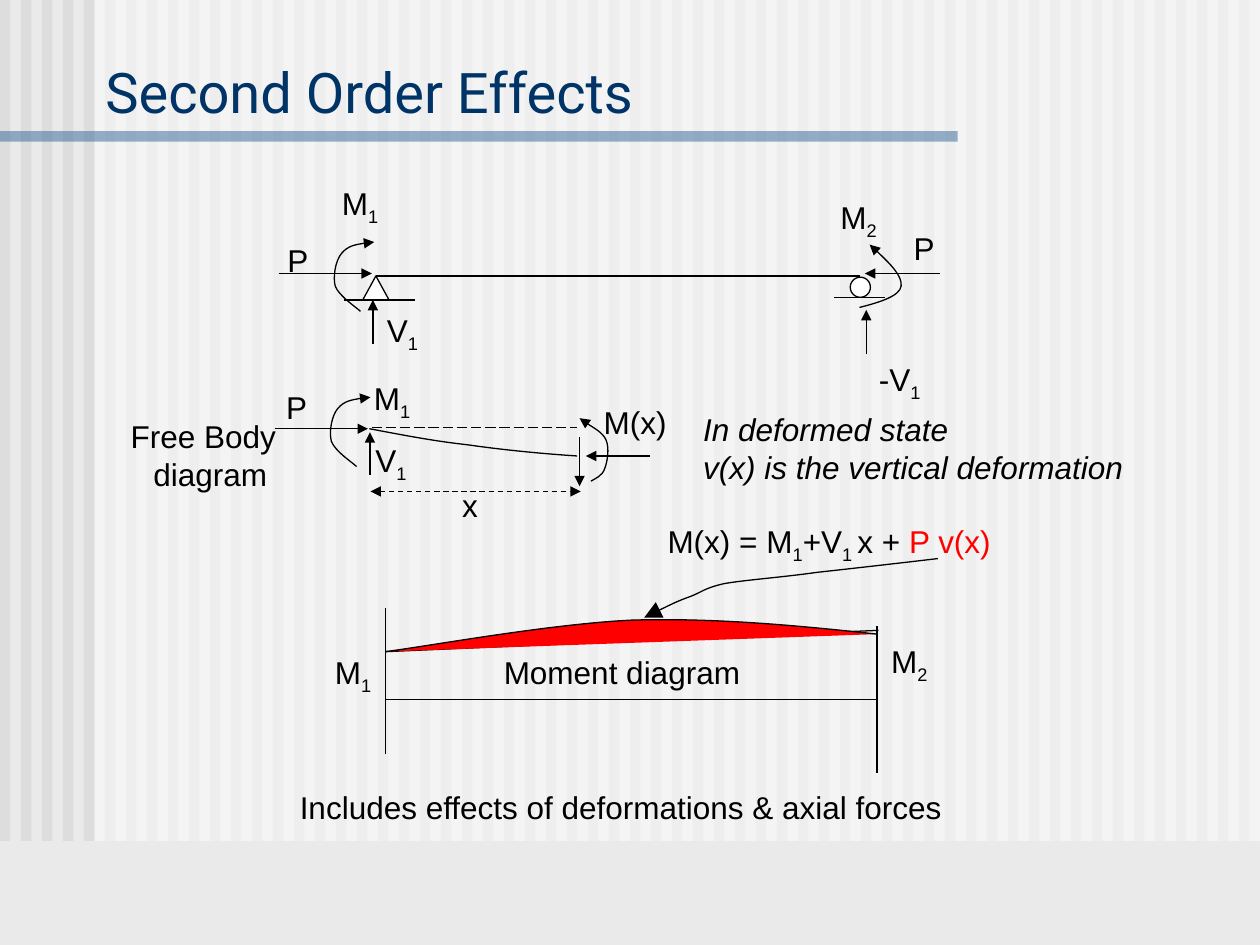
import pptx
import pptx.util
import pptx.dml.color
import pptx.enum.shapes
import pptx.enum.text
import pptx.oxml
import pptx.oxml.ns
from dataclasses import dataclass

Pt = pptx.util.Pt
Shape = pptx.enum.shapes.MSO_SHAPE
Align = pptx.enum.text.PP_ALIGN
qn = pptx.oxml.ns.qn


@dataclass(frozen=True)
class Theme:
    """Colours, fonts and sizes of the slide."""
    back: str = "EAEAEA"
    stripe: str = "DDDDDD"
    white: str = "FFFFFF"
    rule: str = "336699"
    title: str = "003366"
    ink: str = "000000"
    red: str = "FF0000"
    head: str = "Roboto"
    body: str = "Arial"
    big: float = 32
    text: float = 18
    thin: float = 0.75


theme = Theme()


def rgb(code):
    """Turn a hex code into a colour."""
    return pptx.dml.color.RGBColor.from_string(code)


def child(node, tag, **attrs):
    """Add a drawing element below a node."""
    item = pptx.oxml.parse_xml(f"<a:{tag} {pptx.oxml.ns.nsdecls('a')}/>")
    for key, value in attrs.items():
        item.set(key, value)
    node.append(item)
    return item


def stroke(line, dash=None, head=False, tail=False, size="med"):
    """Give a line its ink, dash and arrowheads."""
    line.width = Pt(theme.thin)
    line.color.rgb = rgb(theme.ink)
    node = line._get_or_add_ln()
    if dash:
        child(node, "prstDash", val=dash)
    for tag, shown in (("headEnd", head), ("tailEnd", tail)):
        if shown:
            child(node, tag, type="triangle", w=size, len=size)


def line(group, box, start, end, **style):
    """Draw a straight line inside a box."""
    ends = [Pt(box[i] + p[i]) for p in (start, end) for i in (0, 1)]
    item = group.shapes.add_connector(pptx.enum.shapes.MSO_CONNECTOR.STRAIGHT, *ends)
    child(item._element.spPr, "effectLst")
    stroke(item.line, **style)


def curve(group, box, points, fill=None, **style):
    """Draw a chain of cubic curves inside a box."""
    track = [(Pt(box[0] + x), Pt(box[1] + y)) for x, y in points]
    form = group.shapes.build_freeform(*track[0])
    form.add_line_segments(track[1:], close=False)
    item = form.convert_to_shape()
    item.shadow.inherit = False
    route = item._element.spPr.find(".//" + qn("a:path"))
    legs = route.findall(qn("a:lnTo"))
    for n in range(0, len(legs), 3):
        bend = child(route, "cubicBezTo")
        for leg in legs[n:n + 3]:
            bend.append(leg[0])
            route.remove(leg)
    if fill:
        item.fill.solid()
        item.fill.fore_color.rgb = rgb(fill)
    else:
        item.fill.background()
    stroke(item.line, **style)


def solid(group, kind, box, fill, alpha=None):
    """Draw a filled shape without a line."""
    item = group.shapes.add_shape(kind, *map(Pt, box))
    item.shadow.inherit = False
    item.fill.solid()
    item.fill.fore_color.rgb = rgb(fill)
    item.line.fill.background()
    if alpha:
        child(item._element.spPr.find(".//" + qn("a:srgbClr")),
              "alpha", val=str(alpha * 1000))
    return item


def style(para, slant=None):
    """Set the body font of a paragraph."""
    para.font.name = theme.body
    para.font.size = Pt(theme.text)
    para.font.color.rgb = rgb(theme.ink)
    para.font.italic = slant


def label(group, box, at, width, *parts):
    """Write one line whose every second part is a subscript."""
    item = group.shapes.add_textbox(Pt(box[0] + at[0]), Pt(box[1] + at[1]),
                                    Pt(width), Pt(29))
    item.text_frame.word_wrap = False
    para = item.text_frame.paragraphs[0]
    style(para)
    for n, part in enumerate(parts):
        run = para.add_run()
        run.text = part
        if n % 2:
            run._r.get_or_add_rPr().set("baseline", "-25000")
    return para


def note(slide, box, rows, align=Align.LEFT, slant=None):
    """Write lines of text without margins."""
    frame = slide.shapes.add_textbox(*map(Pt, box)).text_frame
    frame.word_wrap = True
    frame.margin_left = frame.margin_right = frame.margin_top = frame.margin_bottom = 0
    frame.text = "\n".join(rows)
    for para in frame.paragraphs:
        para.alignment = align
        style(para, slant)


def backdrop(slide, master, box):
    """Lay the stripes, the veil and the title rule on the master."""
    left, top, width, height = box
    group = slide.shapes.add_group_shape()
    for n in range(60):
        solid(group, Shape.RECTANGLE, (left + 12 * n, top, 6, height), theme.stripe)
    solid(group, Shape.RECTANGLE, (left + 54, top, width - 54, height), theme.white, 50)
    solid(group, Shape.RECTANGLE, (left, top + 75, 547.2, 6), theme.rule, 50)
    master.shapes._spTree.insert(2, group._element)


def heading(slide, box, text):
    """Fill and place the title."""
    item = slide.shapes.title
    item.left, item.top, item.width, item.height = map(Pt, box)
    frame = item.text_frame
    frame.text = text
    frame.auto_size = pptx.enum.text.MSO_AUTO_SIZE.NONE
    frame.vertical_anchor = pptx.enum.text.MSO_ANCHOR.BOTTOM
    para = frame.paragraphs[0]
    para.alignment = Align.LEFT
    para.font.name = theme.head
    para.font.size = Pt(theme.big)
    para.font.color.rgb = rgb(theme.title)


def thrust(group, box):
    """Draw the axial arrow and the moment at the left end."""
    line(group, box, (0, 0), (53.3, 0), tail=True)
    curve(group, box, [(46.8, 21.6), (44.6, 19.4), (34.6, 13), (32.4, 7.2), (31, 2.2),
                       (32.4, -7.2), (36, -11.5), (39.6, -15.8), (46.8, -17.3),
                       (54.7, -18)], tail=True)


def beam(slide, box):
    """Draw the beam with supports and end forces."""
    group = slide.shapes.add_group_shape()
    line(group, box, (55.5, 1.4), (332, 1.4))
    thrust(group, box)
    line(group, box, (378, 0), (335, 0), tail=True)
    for kind, x, y, w, h in ((Shape.ISOSCELES_TRIANGLE, 48.1, 1.4, 15, 13.7),
                             (Shape.OVAL, 326.7, 2.1, 11.5, 11.5)):
        item = solid(group, kind, (box[0] + x, box[1] + y, w, h), theme.white)
        stroke(item.line)
    line(group, box, (37.6, 15.1), (77.9, 15.1))
    line(group, box, (317.6, 13.6), (346.4, 13.6))
    curve(group, box, [(332, 19.4), (343.6, 16.5), (355.1, 12.9), (355.8, 7.2),
                       (356.5, 1.4), (347.2, -8), (337.8, -16.5)], tail=True)
    line(group, box, (53.9, 40.3), (53.9, 15.1), tail=True)
    line(group, box, (335.8, 46), (335.8, 20.8), tail=True)
    label(group, box, (-2, -22.4), 26.6, "P")
    label(group, box, (355.8, -28.8), 26.6, "P")
    label(group, box, (29.1, -54.7), 36, "M", "1")
    label(group, box, (314, -46.8), 36, "M", "2")
    label(group, box, (54.8, 18), 33, "V", "1")
    label(group, box, (336, 46), 39, "-V", "1")


def body(slide, box):
    """Draw the free body of the deformed part."""
    group = slide.shapes.add_group_shape()
    line(group, box, (214.5, 15.6), (177.8, 15.6), tail=True)
    line(group, box, (174.2, 4.8), (174.2, 32.9), tail=True)
    curve(group, box, [(180.7, 30), (182.8, 28.6), (187.2, 27.2), (188.6, 22.8),
                       (190, 19.2), (191.5, 11.3), (189.3, 6.3), (187.2, 2),
                       (177.8, -3.1), (174.2, -6)], tail=True)
    thrust(group, box)
    line(group, box, (54.4, 26.4), (54.4, 2), tail=True)
    label(group, box, (180.9, -18.2), 50.4, "M(x)")
    line(group, box, (54.7, 35.8), (174.9, 35.8), dash="dash", head=True, tail=True)
    curve(group, box, [(54, 0), (72, 3.4), (90, 7), (110.1, 9.2), (129.6, 12),
                       (151.2, 14.2), (172.8, 15.6)])
    label(group, box, (-0.6, -26.8), 26.6, "P")
    label(group, box, (49.6, -31.9), 36, "M", "1")
    label(group, box, (50.4, 3.4), 33, "V", "1")
    line(group, box, (55.4, -0.9), (172.8, -0.9), dash="lgDash")


def moment(slide, box):
    """Draw the moment diagram."""
    group = slide.shapes.add_group_shape()
    line(group, box, (0, 0), (0, 83.6))
    line(group, box, (281, 10.8), (281, 94.4))
    line(group, box, (0, 52.6), (281.8, 52.6))
    line(group, box, (0, 25.2), (281.8, 13))
    label(group, box, (-35.9, 22.4), 36, "M", "1")
    label(group, box, (282, 16.3), 36, "M", "2")
    label(group, box, (60.6, 22.4), 154.8, "Moment diagram")
    curve(group, box, [(0, 25.2), (23.4, 22.3), (93.9, 9.4), (140.7, 7.2),
                       (187.5, 5.8), (234.3, 10.1), (281, 15.2)], fill=theme.red)
    curve(group, box, [(315.7, -28), (304.2, -26.6), (266.7, -22.3), (246.6, -20.1),
                       (226.4, -17.2), (205.5, -15.8), (193.3, -13.6), (181.8, -10.8),
                       (181.8, -9.3), (174.6, -6.4), (166.6, -3.6), (152.2, 3.6),
                       (147.9, 5.8)], tail=True, size="lg")


def words(slide):
    """Write the notes and the formula around the figures."""
    label(slide, (257, 274.3), (0, 0), 23.8, "x")
    note(slide, (56.9, 238.3, 100.8, 43.2), ("Free Body", "diagram "), Align.RIGHT)
    note(slide, (401.8, 234.3, 279.4, 43.2),
         ("In deformed state", "v(x) is the vertical deformation"), slant=True)
    label(slide, (164.2, 446.7), (0, 0), 400,
          "Includes effects of deformations & axial forces")
    para = label(slide, (374.4, 294.9), (0, 0), 201.6,
                 "M(x) = M", "1", "+V", "1 ", "x + ")
    run = para.add_run()
    run.text = "P v(x)"
    run.font.color.rgb = rgb(theme.red)


def main():
    """Build the slide and save it."""
    deck = pptx.Presentation()
    deck.slide_width, deck.slide_height = Pt(720), Pt(540)
    slide = deck.slides.add_slide(deck.slide_layouts[5])
    slide.background.fill.solid()
    slide.background.fill.fore_color.rgb = rgb(theme.back)
    backdrop(slide, deck.slide_master, (0, 0, 720, 480.5))
    heading(slide, (53, 2.9, 643, 72), "Second Order Effects")
    words(slide)
    beam(slide, (159.2, 156.3))
    body(slide, (157, 245))
    moment(slide, (220.2, 347.2))
    deck.save("out.pptx")


if __name__ == "__main__":
    main()
